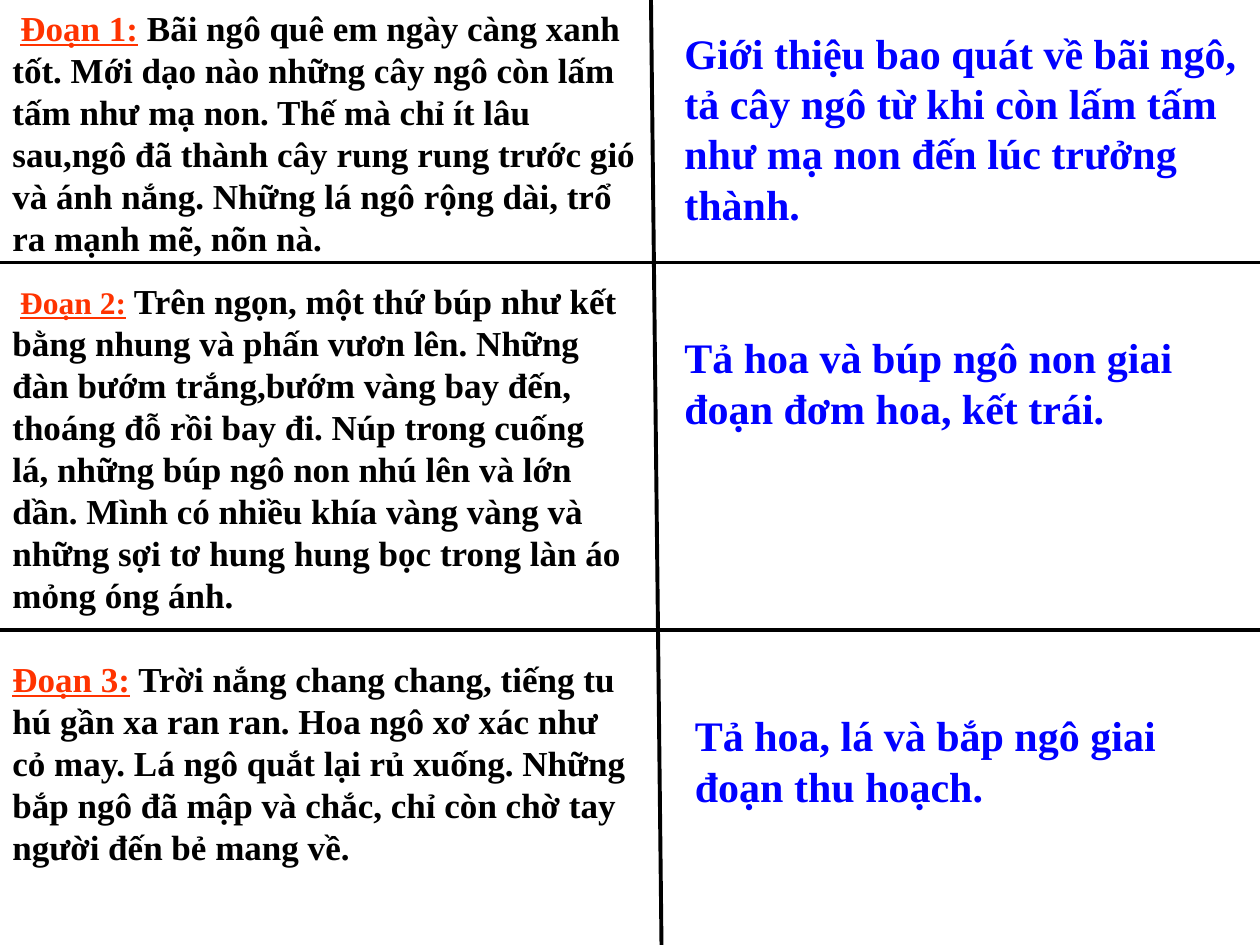
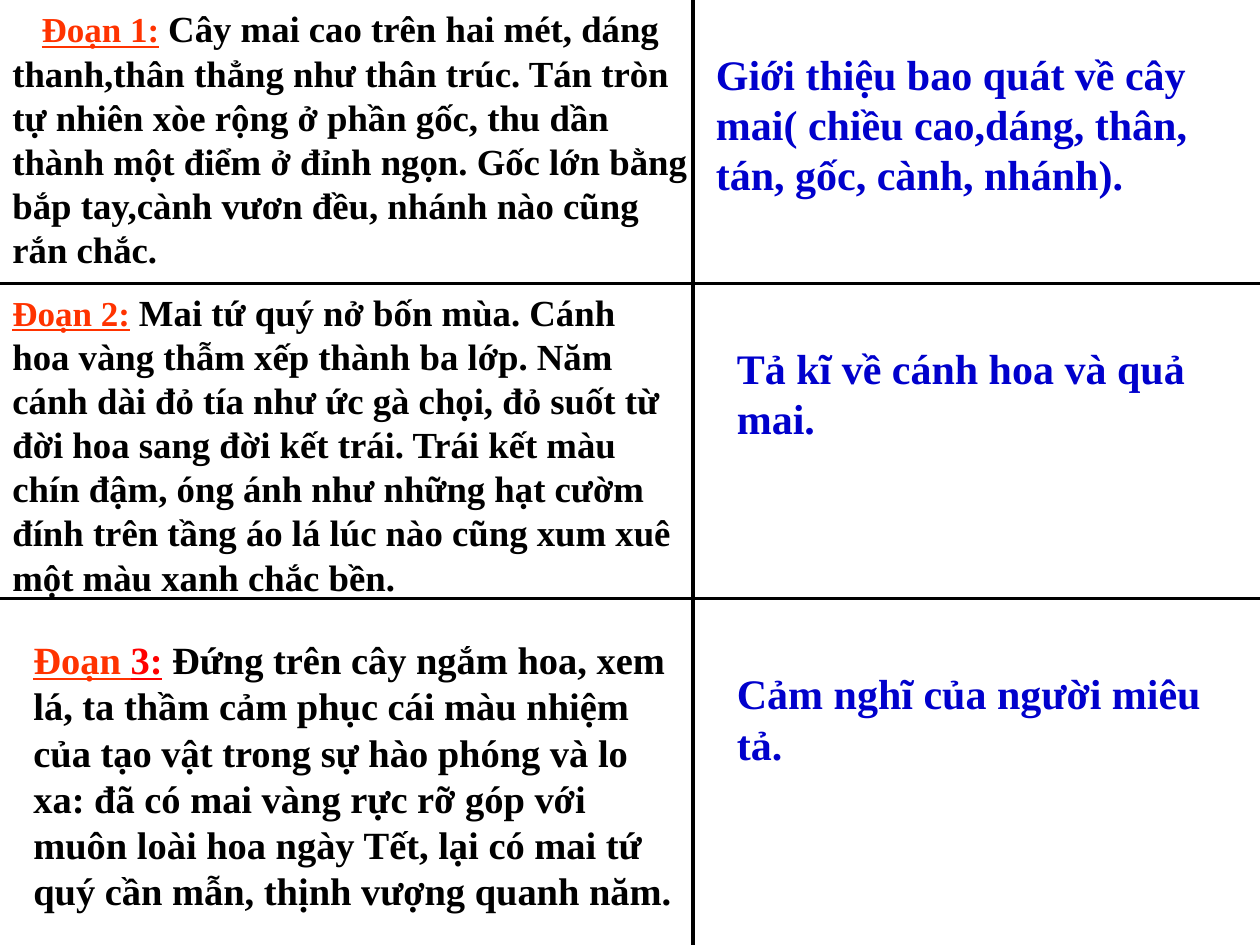
from dataclasses import dataclass

import pptx
import pptx.dml.color
import pptx.enum.shapes
import pptx.enum.text
import pptx.oxml.ns
import pptx.util
from lxml import etree

Pt = pptx.util.Pt


@dataclass(frozen=True)
class Theme:
    """Colours, font and type sizes shared by both pages."""
    font: str = "Times New Roman"
    ink: str = "000000"
    label: str = "FF3300"
    label_number: str = "FF0000"
    corn_summary: str = "0000FF"
    blossom_summary: str = "0000CC"
    small: int = 18
    body: int = 20
    body_large: int = 21
    body_largest: int = 22
    summary: int = 24
    rule: float = 2.25


@dataclass(frozen=True)
class Box:
    """A rectangle in points."""
    left: float
    top: float
    width: float
    height: float

    def inner(self, right, down, width, height):
        """Return a box placed relative to this one."""
        return Box(self.left + right, self.top + down, width, height)


@dataclass(frozen=True)
class Passage:
    """A quoted paragraph with its label; place is relative to its cell."""
    place: tuple
    label: tuple
    text: str
    label_size: int
    size: int
    indent: float = 0


@dataclass(frozen=True)
class Summary:
    """The main idea of a passage; place is relative to its cell."""
    place: tuple
    text: str


THEME = Theme()
PAGE = Box(0, 0, 720, 540)


def add_span(para, text, *, size, color, underline=False):
    """Add bold text to a paragraph."""
    span = para.add_run()
    span.text = text
    font = span.font
    font.name, font.size, font.bold = THEME.font, Pt(size), True
    font.underline = underline
    font.color.rgb = pptx.dml.color.RGBColor.from_string(color)


def add_paragraph_box(page, area, indent=0):
    """Add a wrapping text box and return its paragraph."""
    box = page.shapes.add_textbox(
        Pt(area.left), Pt(area.top), Pt(area.width), Pt(area.height))
    frame = box.text_frame
    frame.word_wrap = True
    frame.auto_size = pptx.enum.text.MSO_AUTO_SIZE.SHAPE_TO_FIT_TEXT
    para = frame.paragraphs[0]
    if indent:
        para._p.get_or_add_pPr().set("indent", str(Pt(indent)))
    return para


def add_rule(page, start, end):
    """Draw one dividing line without a shadow."""
    rule = page.shapes.add_connector(
        pptx.enum.shapes.MSO_CONNECTOR.STRAIGHT, *map(Pt, start + end))
    rule.line.width = Pt(THEME.rule)
    rule.line.color.rgb = pptx.dml.color.RGBColor.from_string(THEME.ink)
    etree.SubElement(rule._element.spPr, pptx.oxml.ns.qn("a:effectLst"))


def add_passage(page, cell, passage):
    """Place a labelled passage in its cell."""
    para = add_paragraph_box(page, cell.inner(*passage.place), passage.indent)
    for text, color in passage.label:
        add_span(para, text, size=passage.label_size, color=color, underline=True)
    add_span(para, " ", size=passage.label_size, color=THEME.ink)
    add_span(para, passage.text, size=passage.size, color=THEME.ink)


def add_summary(page, cell, summary, color):
    """Place a main idea in its cell."""
    para = add_paragraph_box(page, cell.inner(*summary.place))
    add_span(para, summary.text, size=THEME.summary, color=color)


def add_grid(page, area, divider, row_tops):
    """Draw the vertical divider and the lines between rows."""
    right, bottom = area.left + area.width, area.top + area.height
    top_x, bottom_x = (area.left + x for x in divider)
    add_rule(page, (top_x, area.top), (bottom_x, bottom))
    for row_top in row_tops[1:]:
        y = area.top + row_top
        add_rule(page, (area.left, y), (right, y))


def add_comparison_page(deck, area, divider, row_tops, rows, summary_color):
    """Build a page of passages beside their main ideas."""
    page = deck.slides.add_slide(deck.slide_layouts[6])
    column = divider[0]
    row_ends = row_tops[1:] + (area.height,)
    add_grid(page, area, divider, row_tops)
    for top, end, (passage, summary) in zip(row_tops, row_ends, rows):
        add_passage(page, area.inner(0, top, column, end - top), passage)
        summary_cell = area.inner(column, top, area.width - column, end - top)
        add_summary(page, summary_cell, summary, summary_color)


def plain_label(number):
    """Return the usual one-colour label."""
    return ((f"Đoạn {number}:", THEME.label),)


CORN_ROWS = (
    (Passage((0, 0, 372, 152.5), plain_label(1),
             "Bãi ngô quê em ngày càng xanh tốt. Mới dạo nào những cây ngô còn "
             "lấm tấm như mạ non. Thế mà chỉ ít lâu sau,ngô đã thành cây rung "
             "rung trước gió và ánh nắng. Những lá ngô rộng dài, trổ ra mạnh "
             "mẽ, nõn nà.", THEME.body, THEME.body, 4.5),
     Summary((12, 12, 336, 124),
             "Giới thiệu bao quát về bãi ngô, tả cây ngô từ khi còn lấm tấm "
             "như mạ non đến lúc trưởng thành.")),
    (Passage((0, 6, 366, 201), plain_label(2),
             "Trên ngọn, một thứ búp như kết bằng nhung và phấn vươn lên. "
             "Những đàn bướm trắng,bướm vàng bay đến, thoáng đỗ rồi bay đi. "
             "Núp trong cuống lá, những búp ngô non nhú lên và lớn dần. Mình "
             "có nhiều khía vàng vàng và những sợi tơ hung hung bọc trong làn "
             "áo mỏng óng ánh.", THEME.small, THEME.body, 4.5),
     Summary((12, 36, 336, 65.5),
             "Tả hoa và búp ngô non giai đoạn đơm hoa, kết trái.")),
    (Passage((0, 12, 366, 128), plain_label(3),
             "Trời nắng chang chang, tiếng tu hú gần xa ran ran. Hoa ngô xơ "
             "xác như cỏ may. Lá ngô quắt lại rủ xuống. Những bắp ngô đã mập "
             "và chắc, chỉ còn chờ tay người đến bẻ mang về.",
             THEME.body, THEME.body),
     Summary((18, 42, 300, 65.5),
             "Tả hoa, lá và bắp ngô giai đoạn thu hoạch.")),
)

BLOSSOM_ROWS = (
    (Passage((0, 0, 402, 160), plain_label(1),
             "Cây mai cao trên hai mét, dáng thanh,thân thẳng như thân trúc. "
             "Tán tròn tự nhiên xòe rộng ở phần gốc, thu dần thành một điểm ở "
             "đỉnh ngọn. Gốc lớn bằng bắp tay,cành vươn đều, nhánh nào cũng "
             "rắn chắc.", THEME.body, THEME.body_large, 16.7),
     Summary((6, 24, 318, 94),
             "Giới thiệu bao quát về cây mai( chiều cao,dáng, thân, tán, gốc, "
             "cành, nhánh).")),
    (Passage((0, 0, 396, 185), plain_label(2),
             "Mai tứ quý nở bốn mùa. Cánh hoa vàng thẫm xếp thành ba lớp. Năm "
             "cánh dài đỏ tía như ức gà chọi, đỏ suốt từ đời hoa sang đời kết "
             "trái. Trái kết màu chín đậm, óng ánh như những hạt cườm đính "
             "trên tầng áo lá lúc nào cũng xum xuê một màu xanh chắc bền.",
             THEME.body, THEME.body_large),
     Summary((18, 30, 282, 65.5), "Tả kĩ về cánh hoa và quả mai.")),
    (Passage((12, 18, 384, 167),
             (("Đoạn ", THEME.label), ("3:", THEME.label_number)),
             "Đứng trên cây ngắm hoa, xem lá, ta thầm cảm phục cái màu nhiệm "
             "của tạo vật trong sự hào phóng và lo xa: đã có mai vàng rực rỡ "
             "góp với muôn loài hoa ngày Tết, lại có mai tứ quý cần mẫn, thịnh "
             "vượng quanh năm.", THEME.body_largest, THEME.body_largest),
     Summary((18, 36, 288, 65.5), "Cảm nghĩ của người miêu tả.")),
)


def main():
    """Build and save the deck."""
    deck = pptx.Presentation()
    deck.slide_width, deck.slide_height = Pt(PAGE.width), Pt(PAGE.height)
    add_comparison_page(deck, PAGE, (372, 378), (0, 150, 360),
                        CORN_ROWS, THEME.corn_summary)
    add_comparison_page(deck, PAGE, (396, 396), (0, 162, 342),
                        BLOSSOM_ROWS, THEME.blossom_summary)
    deck.save("out.pptx")


if __name__ == "__main__":
    main()
